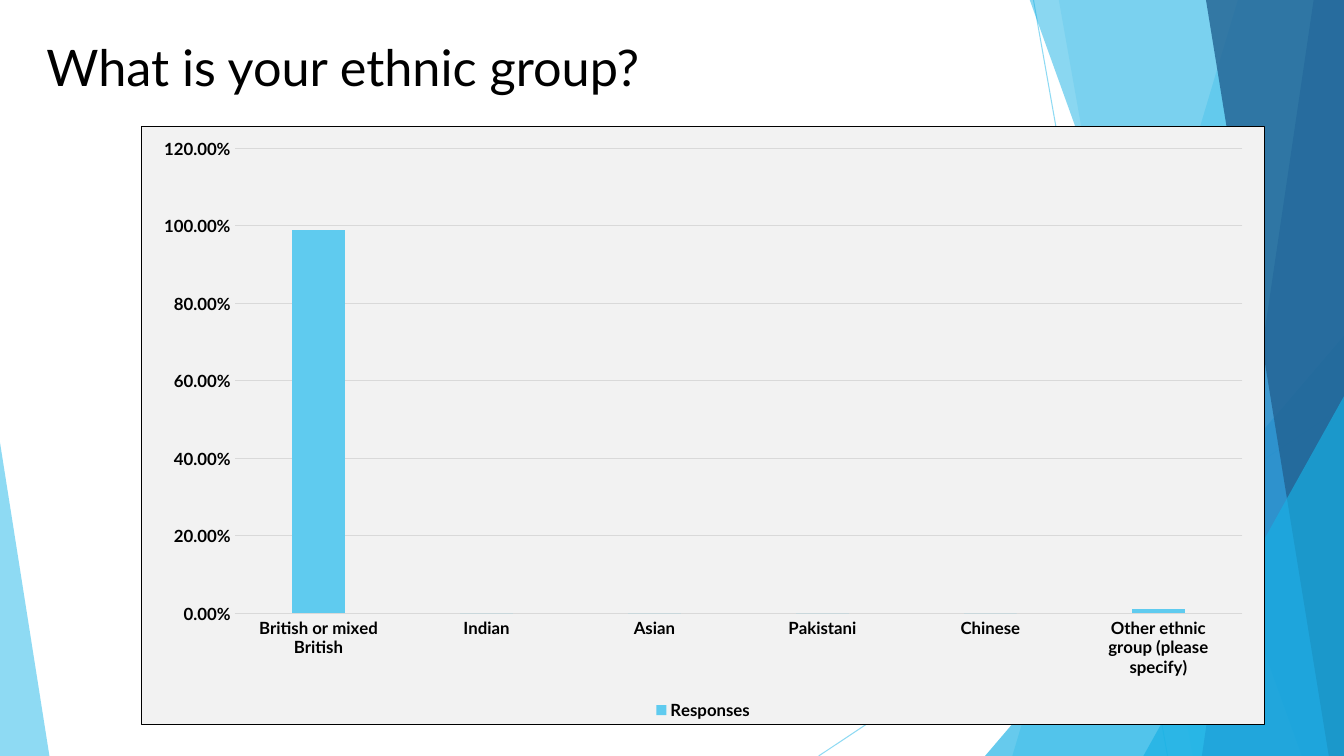
from lxml import etree
from pptx import Presentation, util as u
from pptx.chart.data import CategoryChartData
from pptx.dml.color import RGBColor
from pptx.enum import chart as ch, shapes, text
from pptx.oxml import parse_xml
from pptx.oxml.ns import nsdecls, qn

PX = 9144  # 100 px to the inch
W, H = 1333, 750
FONT = "Lato"
BLACK, GREY, PANEL = "000000", "D9D9D9", "F2F2F2"
SKY, CYAN, BLUE, NAVY = "5FCBEF", "17B0E4", "2E83C3", "226292"
NBSP = chr(160)  # keeps "group (please" on one line

TITLE = "What is your ethnic group?"
TITLE_BOX = (36, 31, 940, 79)
CHART_BOX = (140, 125, 1115, 594)
SERIES = "Responses"
RESPONSES = [
    ("British or mixed British", 0.99),
    ("Indian", 0),
    ("Asian", 0),
    ("Pakistani", 0),
    ("Chinese", 0),
    (f"Other ethnic group{NBSP}(please specify)", 0.01),
]

# Backdrop, back to front
RAYS = [(1025, 0, 1158, H), (W, 403, 812, H)]
# band: top-left x, bottom-left x, colour, opacity; it runs to the right edge
# triangle: left, top, width, apex position, colour, opacity; it stands on the bottom edge
FACETS = [
    ("band", 1228, 1004, SKY, 36),
    ("band", 1050, 1183, SKY, 20),
    ("triangle", 977, 333, 356, 1, CYAN, 66),
    ("band", 1021, 1291, CYAN, 50),
    ("band", 1303, 1192, BLUE, 70),
    ("band", 1196, 1318, NAVY, 80),
    ("triangle", 1134, 393, 199, 1, CYAN, 66),
    ("triangle", 0, 439, 49, 0, SKY, 70),
]


def px(*values):
    return [v * PX for v in values]


def rgb(code):
    return RGBColor.from_string(code)


def set_opacity(sp, percent):
    for color in sp._element.spPr.iter(qn("a:srgbClr")):
        etree.SubElement(color, qn("a:alpha"), val=str(percent * 1000))


def set_font(font, size, color, bold=None):
    font.name, font.size, font.bold = FONT, u.Pt(size), bold
    font.color.rgb = rgb(color)


def set_line(line, color):
    line.color.rgb, line.width = rgb(color), u.Pt(0.75)


def add_ray(s, ends):
    ray = s.shapes.add_connector(shapes.MSO_CONNECTOR.STRAIGHT, *px(*ends))
    set_line(ray.line, SKY)
    set_opacity(ray, 70)
    etree.SubElement(ray._element.spPr, qn("a:effectLst"))


def add_facet(s, kind, *geometry, color, opacity):
    if kind == "band":
        top_x, bottom_x = geometry
        builder = s.shapes.build_freeform(top_x, -1, scale=float(PX))
        builder.add_line_segments([(W, -1), (W, H), (bottom_x, H)], close=True)
        sp = builder.convert_to_shape()
    else:
        left, top, width, apex = geometry
        sp = s.shapes.add_shape(shapes.MSO_SHAPE.ISOSCELES_TRIANGLE,
                                *px(left, top, width, H - top))
        sp.adjustments[0] = apex
    sp.shadow.inherit = False
    sp.fill.solid()
    sp.fill.fore_color.rgb = rgb(color)
    sp.line.fill.background()
    set_opacity(sp, opacity)


def add_title(s):
    sp = s.shapes.title
    sp.left, sp.top, sp.width, sp.height = px(*TITLE_BOX)
    tf = sp.text_frame
    tf.word_wrap = True
    tf.auto_size = text.MSO_AUTO_SIZE.NONE
    tf.vertical_anchor = text.MSO_ANCHOR.TOP
    p = tf.paragraphs[0]
    p.alignment = text.PP_ALIGN.LEFT
    r = p.add_run()
    r.text = TITLE
    set_font(r.font, 36, BLACK)


def add_responses_chart(s):
    data = CategoryChartData(number_format="0.00%")
    data.categories = [name for name, _ in RESPONSES]
    data.add_series(SERIES, [share for _, share in RESPONSES])
    chart = s.shapes.add_chart(ch.XL_CHART_TYPE.COLUMN_CLUSTERED,
                               *px(*CHART_BOX), data).chart
    chart.has_title = False
    set_font(chart.font, 10, BLACK)

    # Columns
    plot = chart.plots[0]
    plot.gap_width, plot.overlap, plot.vary_by_categories = 219, -27, False
    fill = plot.series[0].format.fill
    fill.solid()
    fill.fore_color.rgb = rgb(SKY)

    # Axes
    for axis in (chart.category_axis, chart.value_axis):
        axis.major_tick_mark = axis.minor_tick_mark = ch.XL_TICK_MARK.NONE
        set_font(axis.tick_labels.font, 12, BLACK, True)
    set_line(chart.category_axis.format.line, GREY)
    values = chart.value_axis
    values.minimum_scale, values.maximum_scale, values.major_unit = 0, 1.2, 0.2
    values.format.line.fill.background()
    set_line(values.major_gridlines.format.line, GREY)
    values.tick_labels.number_format = "0.00%"
    values.tick_labels.number_format_is_linked = False

    # Legend
    chart.has_legend = True
    chart.legend.position = ch.XL_LEGEND_POSITION.BOTTOM
    chart.legend.include_in_layout = False
    set_font(chart.legend.font, 12, BLACK, True)

    # Panel fill and border
    panel = parse_xml(
        f'<c:spPr {nsdecls("c", "a")}>'
        f'<a:solidFill><a:srgbClr val="{PANEL}"/></a:solidFill>'
        f'<a:ln w="{u.Pt(0.75)}"><a:solidFill><a:srgbClr val="{BLACK}"/></a:solidFill></a:ln>'
        '</c:spPr>')
    chart._chartSpace.find(qn("c:txPr")).addprevious(panel)


def main():
    prs = Presentation()
    prs.slide_width, prs.slide_height = px(W, H)
    s = prs.slides.add_slide(prs.slide_layouts[5])
    for ends in RAYS:
        add_ray(s, ends)
    for *facet, color, opacity in FACETS:
        add_facet(s, *facet, color=color, opacity=opacity)
    add_title(s)
    add_responses_chart(s)
    prs.save("out.pptx")


if __name__ == "__main__":
    main()
